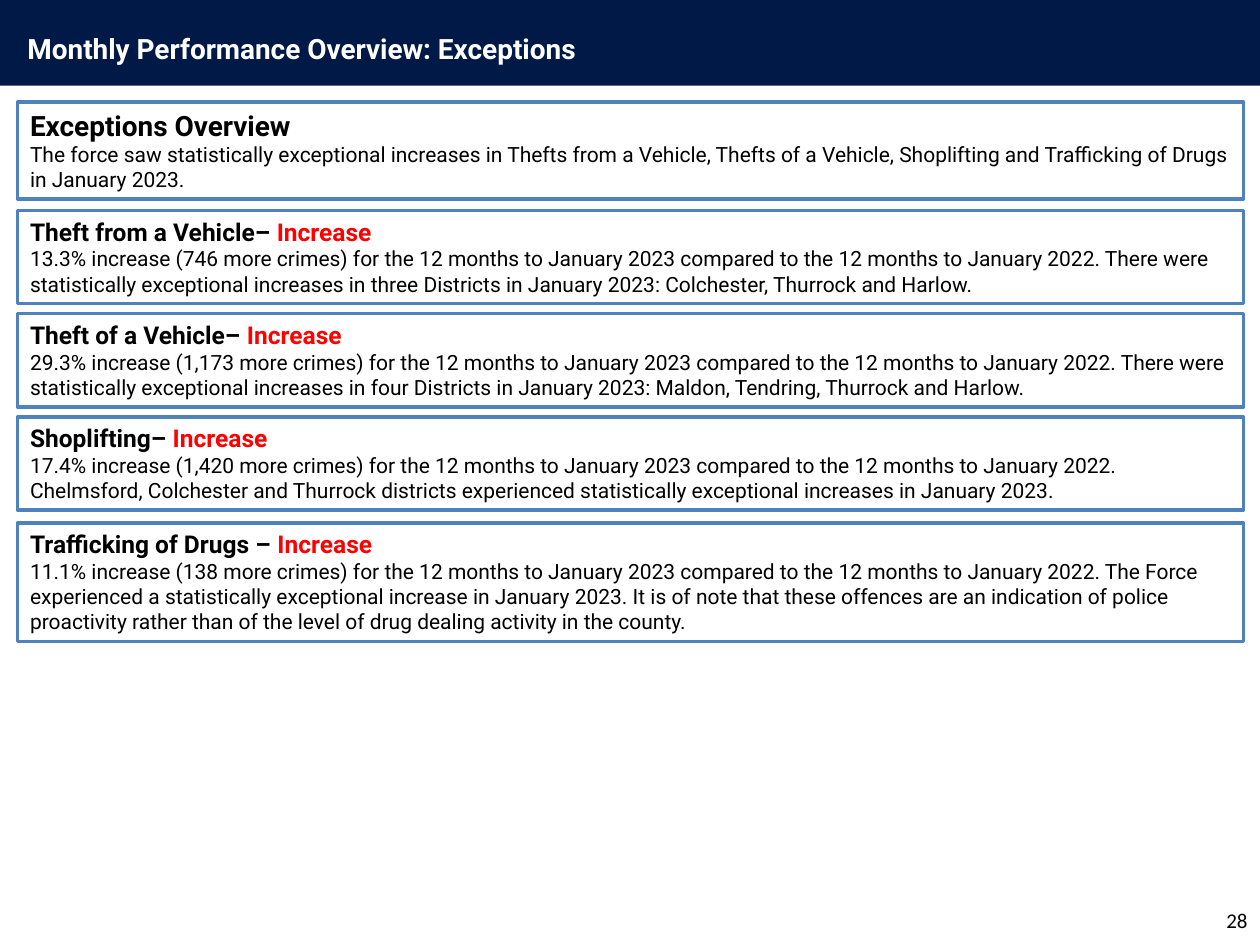
import pptx
import pptx.dml.color
import pptx.enum.shapes
import pptx.enum.text
import pptx.util

Inches = pptx.util.Inches
Anchor = pptx.enum.text.MSO_ANCHOR
Align = pptx.enum.text.PP_ALIGN

COLORS = {
    "navy": "001947",
    "border": "4F81BD",
    "white": "FFFFFF",
    "black": "000000",
    "alert": "FF0000",
}


class SlideBuilder:
    """Holds the style and the current slide."""

    font = "Roboto"
    body_size = 12

    def __init__(self, slide):
        self.slide = slide

    def color(self, name):
        return pptx.dml.color.RGBColor.from_string(COLORS[name])

    def rectangle(self, left, top, width, height, fill, line=None):
        shape = self.slide.shapes.add_shape(
            pptx.enum.shapes.MSO_SHAPE.RECTANGLE,
            Inches(left), Inches(top), Inches(width), Inches(height))
        shape.shadow.inherit = False
        shape.fill.solid()
        shape.fill.fore_color.rgb = self.color(fill)
        if line:
            shape.line.color.rgb = self.color(line)
            shape.line.width = pptx.util.Pt(2)
        else:
            shape.line.fill.background()
        return shape

    def run(self, paragraph, text, size, color="black", bold=False, font=None):
        run = paragraph.add_run()
        run.text = text
        run.font.name = font or self.font
        run.font.size = pptx.util.Pt(size)
        run.font.bold = bold
        run.font.color.rgb = self.color(color)

    def label(self, left, top, width, height, text, size, align=Align.LEFT,
              anchor=Anchor.TOP, **style):
        box = self.slide.shapes.add_textbox(
            Inches(left), Inches(top), Inches(width), Inches(height))
        frame = box.text_frame
        frame.word_wrap = True
        frame.vertical_anchor = anchor
        paragraph = frame.paragraphs[0]
        paragraph.alignment = align
        self.run(paragraph, text, size, **style)

    def panel(self, top, height, heading, body, size=14, trend=None):
        shape = self.rectangle(0.14, top, 9.73, height, "white", "border")
        frame = shape.text_frame
        frame.word_wrap = True
        frame.vertical_anchor = Anchor.TOP
        title = frame.paragraphs[0]
        self.run(title, heading, size, bold=True)
        if trend:
            self.run(title, trend, size, color="alert", bold=True)
        detail = frame.add_paragraph()
        self.run(detail, body, self.body_size)
        for paragraph in (title, detail):
            paragraph.alignment = Align.LEFT


# Crime types: top, height, heading, change in figures, commentary
PERIOD = "for the 12 months to January 2023 compared to the 12 months to January 2022."
EXCEPTIONS = [
    (1.67, 0.74, "Theft from a Vehicle– ", "13.3% increase (746 more crimes)",
     "There were statistically exceptional increases in three Districts in "
     "January 2023: Colchester, Thurrock and Harlow."),
    (2.49, 0.74, "Theft of a Vehicle– ", "29.3% increase (1,173 more crimes)",
     "There were statistically exceptional increases in four Districts in "
     "January 2023: Maldon, Tendring, Thurrock and Harlow."),
    (3.31, 0.74, "Shoplifting– ", "17.4% increase (1,420 more crimes)",
     "Chelmsford, Colchester and Thurrock districts experienced statistically "
     "exceptional increases in January 2023."),
    (4.15, 0.94, "Trafficking of Drugs – ", "11.1% increase (138 more crimes)",
     "The Force experienced a statistically exceptional increase in January "
     "2023. It is of note that these offences are an indication of police "
     "proactivity rather than of the level of drug dealing activity in the county."),
]


def main():
    presentation = pptx.Presentation()
    presentation.slide_width = Inches(10)
    presentation.slide_height = Inches(7.5)
    slide = presentation.slides.add_slide(presentation.slide_layouts[6])
    builder = SlideBuilder(slide)

    # Header band and title
    builder.rectangle(0, -0.07, 10, 0.75, "navy")
    builder.label(0.12, 0.2, 5.67, 0.37, "Monthly Performance Overview: Exceptions",
                  16, color="white", bold=True)

    # Page number
    builder.label(7.67, 7.1, 2.33, 0.4, "28", 12, align=Align.RIGHT,
                  anchor=Anchor.MIDDLE, font="Calibri")

    # Overview panel
    builder.panel(0.81, 0.77, "Exceptions Overview",
                  "The force saw statistically exceptional increases in Thefts from "
                  "a Vehicle, Thefts of a Vehicle, Shoplifting and Trafficking of "
                  "Drugs in January 2023.", size=16)

    # One panel per crime type
    for top, height, heading, change, comment in EXCEPTIONS:
        builder.panel(top, height, heading, f"{change} {PERIOD} {comment}",
                      trend="Increase")

    presentation.save("out.pptx")


if __name__ == "__main__":
    main()
